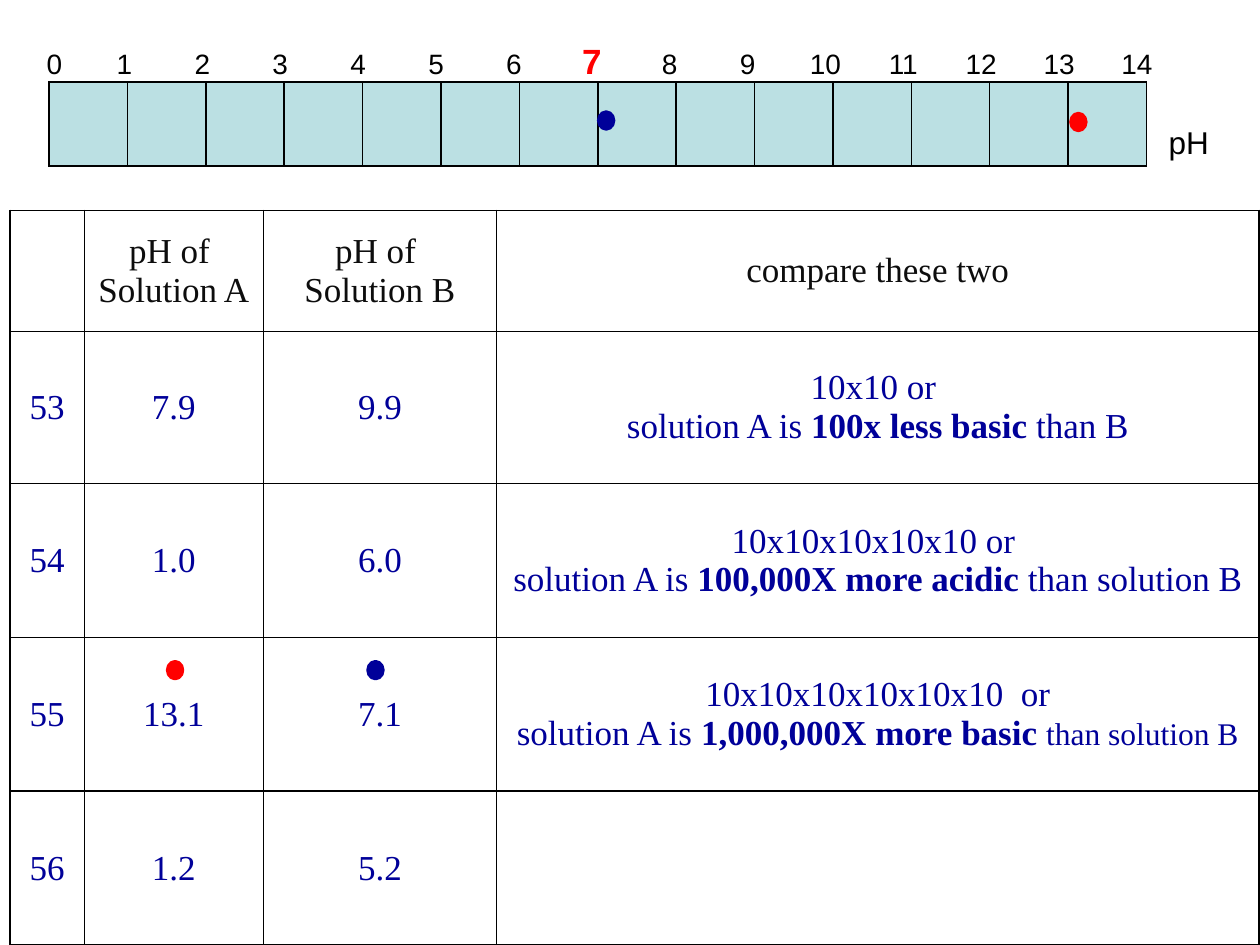
from lxml import etree
from pptx import Presentation
from pptx.dml.color import RGBColor
from pptx.enum import shapes, text
from pptx.oxml import ns
from pptx.util import Cm, Pt

COLORS = {"black": "000000", "heading": "0D0D0D", "blue": "000099",
          "red": "FF0000", "scale": "BBE0E3", "white": "FFFFFF"}
SCALE_STEPS = 14
NEUTRAL = 7
HEADINGS = ["", "pH of \nSolution A", "pH of \nSolution B", "compare these two"]
# Number, pH of A, pH of B, then the plain, bold and closing parts of the answer
COMPARISONS = [
    ("53", "7.9", "9.9",
     ("10x10 or \nsolution A is ", "100x less basic ", "than B")),
    ("54", "1.0", "6.0",
     ("10x10x10x10x10 or \nsolution A is ", "100,000X more acidic ", "than solution B")),
    ("55", "13.1", "7.1",
     ("10x10x10x10x10x10  or\nsolution A is ", "1,000,000X more basic ", "than solution B")),
    ("56", "1.2", "5.2", ("",)),
]


def color(name):
    return RGBColor.from_string(COLORS[name])


def set_font(font, name, size, color_name):
    font.name = name
    font.size = Pt(size)
    font.color.rgb = color(color_name)


def format_cell(cell, fill):
    """Fill the cell and draw a thin black border on its four sides."""
    cell.fill.solid()
    cell.fill.fore_color.rgb = color(fill)
    properties = cell._tc.get_or_add_tcPr()
    for index, side in enumerate(("lnL", "lnR", "lnT", "lnB")):
        line = etree.Element(ns.qn(f"a:{side}"), w=str(Pt(1)))
        solid = etree.SubElement(line, ns.qn("a:solidFill"))
        etree.SubElement(solid, ns.qn("a:srgbClr"), val=COLORS["black"])
        properties.insert(index, line)


def add_grid(slide, left, top, widths, heights, fill):
    table = slide.shapes.add_table(len(heights), len(widths), Cm(left), Cm(top),
                                   Cm(sum(widths)), Cm(sum(heights))).table
    table.first_row = table.horz_banding = False
    for column, width in zip(table.columns, widths):
        column.width = Cm(width)
    for row, height in zip(table.rows, heights):
        row.height = Cm(height)
    for cell in table.iter_cells():
        format_cell(cell, fill)
    return table


def add_label(slide, left, top, width, height):
    """Add an empty text box and return its paragraph."""
    frame = slide.shapes.add_textbox(Cm(left), Cm(top), Cm(width), Cm(height)).text_frame
    frame.word_wrap = True
    return frame.paragraphs[0]


def add_scale_numbers(slide, left, top, width, height, step):
    """Write 0 to 14 on one line, each number centred on its own tab stop."""
    paragraph = add_label(slide, left, top, width, height)
    set_font(paragraph.font, "Arial", 16, "black")
    stops = etree.SubElement(paragraph._p.get_or_add_pPr(), ns.qn("a:tabLst"))
    paragraph._p.pPr.insert(0, stops)
    for number in range(SCALE_STEPS + 1):
        if number:
            etree.SubElement(stops, ns.qn("a:tab"), pos=str(Cm(step * number)), algn="ctr")
        run = paragraph.add_run()
        run.text = f"\t{number}" if number else "0"
        if number == NEUTRAL:
            set_font(run.font, "Arial", 20, "red")
            run.font.bold = True


def add_ph_scale(slide, left, top, step, height):
    add_scale_numbers(slide, left - 0.3, top - 0.97, 23.4, 1.12, 1.57)
    add_grid(slide, left, top, [step] * SCALE_STEPS, [height], "scale")
    paragraph = add_label(slide, left + step * SCALE_STEPS + 0.2, top + 0.7, 1.48, 1.02)
    paragraph.text = "pH"
    set_font(paragraph.font, "Arial", 18, "black")


def write_cell(cell, parts, color_name):
    """Write the parts in turn; the second one is bold."""
    cell.vertical_anchor = text.MSO_ANCHOR.MIDDLE
    paragraph = cell.text_frame.paragraphs[0]
    paragraph.alignment = text.PP_ALIGN.CENTER
    paragraph.text = parts[0]
    set_font(paragraph.font, "Times New Roman", 20, color_name)
    for index, part in enumerate(parts[1:], 1):
        run = paragraph.add_run()
        run.text = part
        run.font.bold = index == 1


def add_comparison_table(slide, left, top):
    table = add_grid(slide, left, top, [1.5, 3.61, 4.7, 15.37],
                     [2.44, 3.07, 3.1, 3.1, 3.1], "white")
    for column, heading in enumerate(HEADINGS):
        write_cell(table.cell(0, column), (heading,), "heading")
    for row, (*values, answer) in enumerate(COMPARISONS, 1):
        for column, parts in enumerate([(value,) for value in values] + [answer]):
            write_cell(table.cell(row, column), parts, "blue")
    closing = table.cell(3, 3).text_frame.paragraphs[0].runs[-1]
    closing.font.size = Pt(18)


def add_dot(slide, left, top, color_name):
    dot = slide.shapes.add_shape(shapes.MSO_SHAPE.OVAL, Cm(left), Cm(top), Cm(0.3), Cm(0.34))
    dot.shadow.inherit = False
    dot.fill.solid()
    dot.fill.fore_color.rgb = color(color_name)
    dot.line.color.rgb = color(color_name)
    dot.line.width = Pt(2)


def main():
    presentation = Presentation()
    presentation.slide_width, presentation.slide_height = Cm(25.4), Cm(19.05)
    slide = presentation.slides.add_slide(presentation.slide_layouts[6])
    add_ph_scale(slide, 0.99, 1.65, 1.58, 1.7)
    add_comparison_table(slide, 0.2, 4.24)
    for left, top, color_name in [(21.59, 2.29, "red"), (3.38, 13.34, "red"),
                                  (12.07, 2.26, "blue"), (7.42, 13.34, "blue")]:
        add_dot(slide, left, top, color_name)
    presentation.save("out.pptx")


if __name__ == "__main__":
    main()
